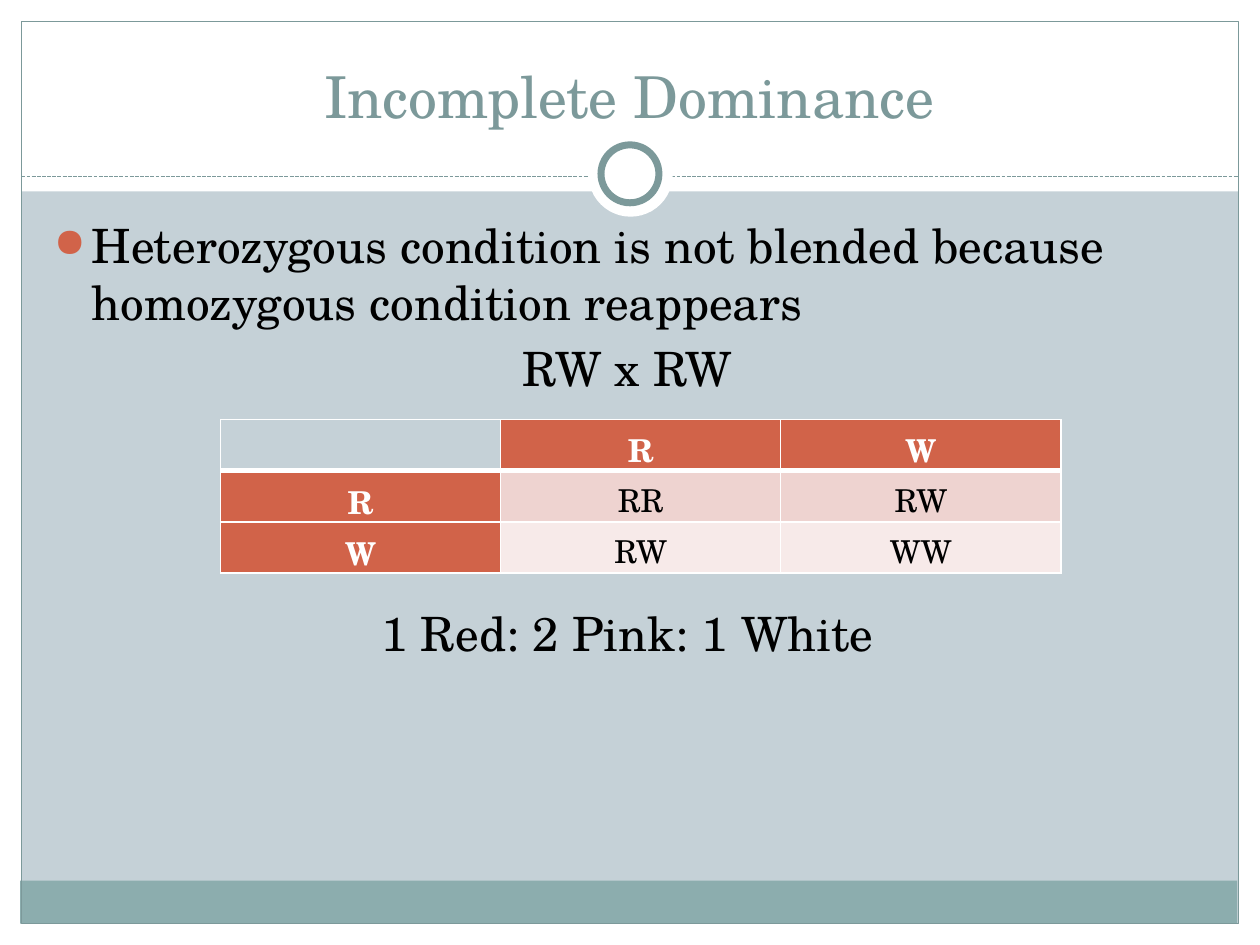
import pptx
import pptx.dml.color
import pptx.enum.dml
import pptx.enum.shapes
import pptx.enum.text
import pptx.oxml
import pptx.oxml.ns
import pptx.util

Inches = pptx.util.Inches
Pt = pptx.util.Pt
RGBColor = pptx.dml.color.RGBColor
Shape = pptx.enum.shapes.MSO_SHAPE
Align = pptx.enum.text.PP_ALIGN
Anchor = pptx.enum.text.MSO_ANCHOR

WHITE = RGBColor(0xFF, 0xFF, 0xFF)
BLACK = RGBColor(0, 0, 0)
BACKDROP = RGBColor(0xC5, 0xD1, 0xD7)
TEAL = RGBColor(0x7C, 0x99, 0x9A)
FOOTER = RGBColor(0x8C, 0xAD, 0xAE)
RUST = RGBColor(0xD1, 0x63, 0x49)
ROSE = RGBColor(0xEE, 0xD3, 0xD0)
BLUSH = RGBColor(0xF7, 0xEA, 0xE9)
FONT = "TeX Gyre Schola"


def xml(markup):
    head, tail = markup.split(">", 1) if "/>" not in markup.split(">", 1)[0] + ">" else (markup[:-2], None)
    namespaces = " " + pptx.oxml.ns.nsdecls("a")
    return pptx.oxml.parse_xml(head + namespaces + ("/>" if tail is None else ">" + tail))


def write(paragraph, text, size=27, color=BLACK, bold=False, align=Align.CENTER, before=0):
    paragraph.alignment = align
    paragraph.space_before = Pt(before)
    run = paragraph.add_run()
    run.text = text
    run.font.name = FONT
    run.font.size = Pt(size)
    run.font.bold = bold
    run.font.color.rgb = color


class SlideBuilder:
    def __init__(self, slide):
        self.slide = slide
        slide.background.fill.solid()
        slide.background.fill.fore_color.rgb = BACKDROP

    def shape(self, box, fill=None, line=None, width=0.75, kind=Shape.RECTANGLE):
        part = self.slide.shapes.add_shape(kind, *map(Inches, box))
        part.shadow.inherit = False
        if fill is None:
            part.fill.background()
        else:
            part.fill.solid()
            part.fill.fore_color.rgb = fill
        if line is None:
            part.line.fill.background()
        else:
            part.line.color.rgb = line
            part.line.width = Pt(width)

    def rule(self, left, right, y):
        divider = self.slide.shapes.add_connector(
            pptx.enum.shapes.MSO_CONNECTOR.STRAIGHT,
            Inches(left), Inches(y), Inches(right), Inches(y))
        divider.line.color.rgb = TEAL
        divider.line.width = Pt(0.75)
        divider.line.dash_style = pptx.enum.dml.MSO_LINE.SQUARE_DOT
        divider.element.spPr.append(xml("<a:effectLst/>"))

    def title(self, text, box):
        heading = self.slide.shapes.title
        heading.left, heading.top, heading.width, heading.height = map(Inches, box)
        frame = heading.text_frame
        frame.auto_size = pptx.enum.text.MSO_AUTO_SIZE.NONE
        frame.vertical_anchor = Anchor.BOTTOM
        write(frame.paragraphs[0], text, size=33, color=TEAL)
        heading.element.getparent().append(heading.element)

    def body(self, box, lines):
        frame = self.slide.shapes.add_textbox(*map(Inches, box)).text_frame
        frame.word_wrap = True
        for index, (text, bulleted, before) in enumerate(lines):
            paragraph = frame.add_paragraph() if index else frame.paragraphs[0]
            write(paragraph, text, before=before, align=Align.LEFT if bulleted else Align.CENTER)
            properties = paragraph._p.get_or_add_pPr()
            properties.set("marL", str(Inches(0.3)))
            properties.set("indent", str(-Inches(0.3)))
            if bulleted:
                properties.append(xml(f'<a:buClr><a:srgbClr val="{RUST}"/></a:buClr>'))
                properties.append(xml('<a:buSzPct val="85000"/>'))
                properties.append(xml('<a:buChar char="●"/>'))
            else:
                properties.append(xml("<a:buNone/>"))

    def cell(self, cell, text, fill, heading, borders):
        cell.fill.solid()
        cell.fill.fore_color.rgb = fill
        if text:
            write(cell.text_frame.paragraphs[0], text, size=18,
                  color=WHITE if heading else BLACK, bold=heading)
        properties = cell._tc.get_or_add_tcPr()
        for index, (side, width) in enumerate(borders.items()):
            properties.insert(index, xml(
                f'<a:ln{side} w="{Pt(width)}"><a:solidFill>'
                f'<a:srgbClr val="{WHITE}"/></a:solidFill></a:ln{side}>'))

    def punnett_square(self, box, rows):
        table = self.slide.shapes.add_table(len(rows), len(rows[0]), *map(Inches, box)).table
        table.first_row = False
        table.horz_banding = False
        row_fills = (RUST, ROSE, BLUSH)
        for r, row in enumerate(rows):
            borders = {"L": 1, "R": 1, "T": 3 if r == 1 else 1, "B": 3 if r == 0 else 1}
            for c, text in enumerate(row):
                heading = r == 0 or c == 0
                fill = BACKDROP if r == c == 0 else RUST if heading else row_fills[r]
                self.cell(table.cell(r, c), text, fill, heading, borders)


def main():
    deck = pptx.Presentation()
    deck.slide_width, deck.slide_height = Inches(10), Inches(7.5)
    builder = SlideBuilder(deck.slides.add_slide(deck.slide_layouts[5]))

    margin = 0.17
    for band in ((0, 7.5 - margin, 10, margin), (0, 0, 10, 1.52),
                 (0, 0, margin, 7.5), (10 - margin, 0, margin, 7.5)):
        builder.shape(band, fill=WHITE)
    builder.shape((0.16, 6.99, 9.66, 0.34), fill=FOOTER)
    builder.shape((margin, margin, 9.66, 7.16), line=TEAL)
    builder.rule(margin, 10 - margin, 1.4)
    builder.shape((4.67, 1.05, 0.67, 0.67), fill=WHITE, kind=Shape.OVAL)
    builder.shape((4.77, 1.15, 0.46, 0.46), fill=WHITE, line=TEAL, width=4, kind=Shape.OVAL)

    builder.title("Incomplete Dominance", (0.33, 0.25, 9.33, 0.83))
    builder.body((0.33, 1.67, 9.3, 5), (
        ("Heterozygous condition is not blended because homozygous condition reappears", True, 5.4),
        ("RW x RW", False, 5.4),
        ("1 Red: 2 Pink: 1 White", False, 119),
    ))
    builder.punnett_square((1.75, 3.33, 6.67, 1.22), (
        ("", "R", "W"),
        ("R", "RR", "RW"),
        ("W", "RW", "WW"),
    ))
    deck.save("out.pptx")


if __name__ == "__main__":
    main()
